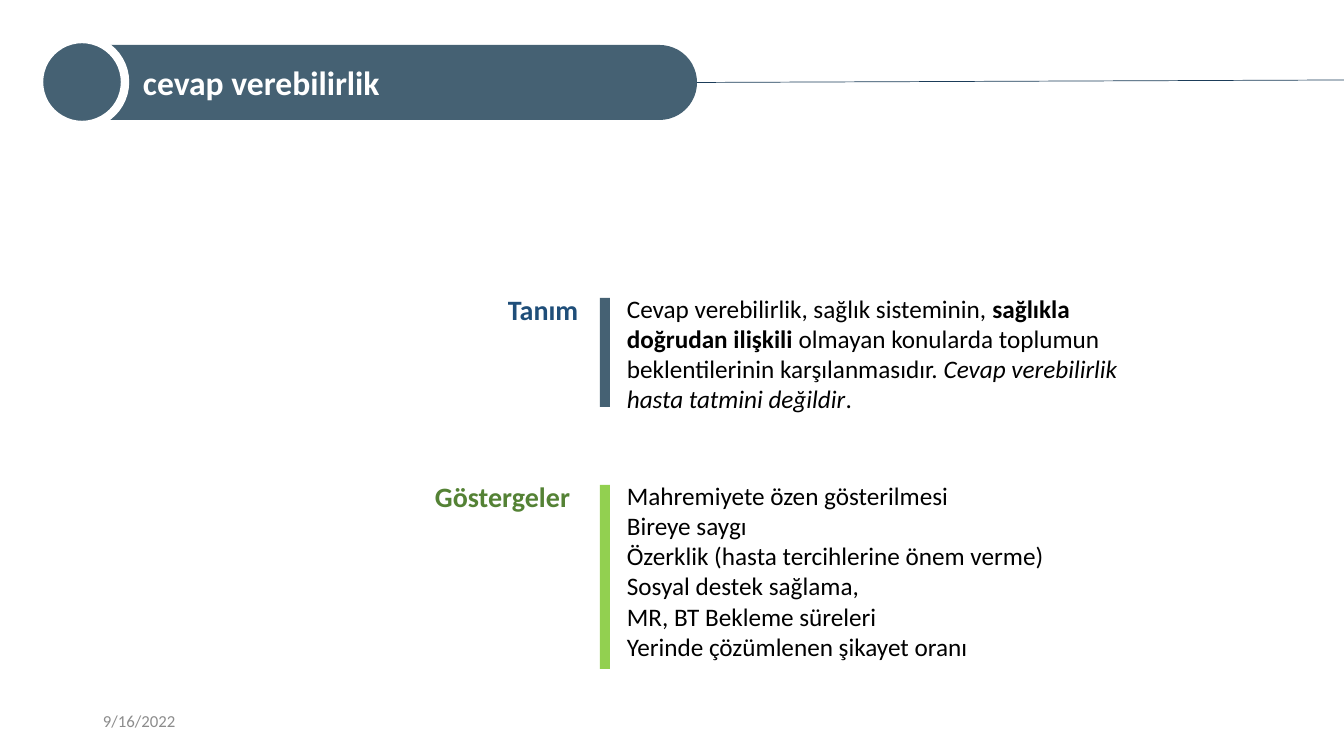
from pptx import Presentation
from pptx.dml.color import RGBColor
from pptx.enum.shapes import MSO_CONNECTOR, MSO_SHAPE
from pptx.enum.text import MSO_ANCHOR, PP_ALIGN
from pptx.oxml.ns import qn
from pptx.util import Pt
from lxml import etree

RECT, ROUND, OVAL = MSO_SHAPE.RECTANGLE, MSO_SHAPE.ROUNDED_RECTANGLE, MSO_SHAPE.OVAL
STRAIGHT = MSO_CONNECTOR.STRAIGHT
TOP, MIDDLE = MSO_ANCHOR.TOP, MSO_ANCHOR.MIDDLE
LEFT = PP_ALIGN.LEFT

SLATE = RGBColor(0x45, 0x61, 0x73)
NAVY = RGBColor(0x1B, 0x3C, 0x59)
BLUE = RGBColor(0x1F, 0x4E, 0x79)
LIME = RGBColor(0x92, 0xD0, 0x50)
GREEN = RGBColor(0x54, 0x82, 0x35)
GREY = RGBColor(0x8C, 0x8C, 0x8C)
BLACK = RGBColor(0, 0, 0)
WHITE = RGBColor(255, 255, 255)

FONT = "Calibri"
TITLE = "cevap verebilirlik"
DATE = "9/16/2022"
DEFINITION = [[
    ("Cevap verebilirlik, sağlık sisteminin, ", ""),
    ("sağlıkla doğrudan ilişkili ", "b"),
    ("olmayan konularda toplumun beklentilerinin karşılanmasıdır. ", ""),
    ("Cevap verebilirlik hasta tatmini değildir", "i"),
    (".", ""),
]]
INDICATORS = [[(line, "")] for line in (
    "Mahremiyete özen gösterilmesi",
    "Bireye saygı",
    "Özerklik (hasta tercihlerine önem verme)",
    "Sosyal destek sağlama,",
    "MR, BT Bekleme süreleri",
    "Yerinde çözümlenen şikayet oranı",
)]
SECTIONS = [
    ("Tanım", BLUE, 498, 119, SLATE, 288, 109, DEFINITION, 554, 132),
    ("Göstergeler", GREEN, 425, 169, LIME, 475, 184, INDICATORS, 563, 194),
]
BAR_X, BAR_W, BAR_DROP = 600, 10, 10
BODY_X, HEADING_H = 617, 44
SCALE = 914400 / 100.8


def px(n):
    return round(n * SCALE)


def add_shape(kind, x, y, w, h, fill):
    s = slide.shapes.add_shape(kind, px(x), px(y), px(w), px(h))
    s.shadow.inherit = False
    s.fill.solid()
    s.fill.fore_color.rgb = fill
    s.line.fill.background()
    return s


def write(s, paragraphs, size, color, bold=None, anchor=TOP):
    tf = s.text_frame
    tf.word_wrap = True
    tf.vertical_anchor = anchor
    for i, runs in enumerate(paragraphs):
        p = tf.add_paragraph() if i else tf.paragraphs[0]
        p.alignment = LEFT
        p.font.name, p.font.size, p.font.bold = FONT, Pt(size), bold
        p.font.color.rgb = color
        for text, style in runs:
            r = p.add_run()
            r.text = text
            r.font.name, r.font.size = FONT, Pt(size)
            r.font.color.rgb = color
            r.font.bold = bold or style == "b"
            r.font.italic = style == "i"


def add_text(x, y, w, h, paragraphs, *style):
    s = slide.shapes.add_textbox(px(x), px(y), px(w), px(h))
    write(s, paragraphs, *style)


prs = Presentation()
prs.slide_width, prs.slide_height = px(1344), px(756)
slide = prs.slides.add_slide(prs.slide_layouts[6])

banner = add_shape(ROUND, 69, 45, 628, 75, SLATE)
banner.adjustments[0] = 0.5
banner.text_frame.margin_left = px(63)
write(banner, [[(TITLE, "")]], 24, WHITE, True, MIDDLE)

dot = add_shape(OVAL, 39, 39, 86, 86, SLATE)
dot.line.color.rgb = WHITE
dot.line.width = Pt(6)

rule = slide.shapes.add_connector(STRAIGHT, px(697), px(83), px(1344), px(80))
rule.begin_connect(banner, 3)
rule.line.color.rgb = NAVY
rule.line.width = Pt(0.5)
etree.SubElement(rule._element.spPr, qn("a:effectLst"))

add_text(93, 701, 302, 40, [[(DATE, "")]], 12, GREY, None, MIDDLE)

for heading, color, x, w, bar, y, bar_h, body, body_w, body_h in SECTIONS:
    add_text(BODY_X, y, body_w, body_h, body, 18, BLACK)
    add_shape(RECT, BAR_X, y + BAR_DROP, BAR_W, bar_h, bar)
    add_text(x, y, w, HEADING_H, [[(heading, "")]], 20, color, True)

prs.save("out.pptx")
